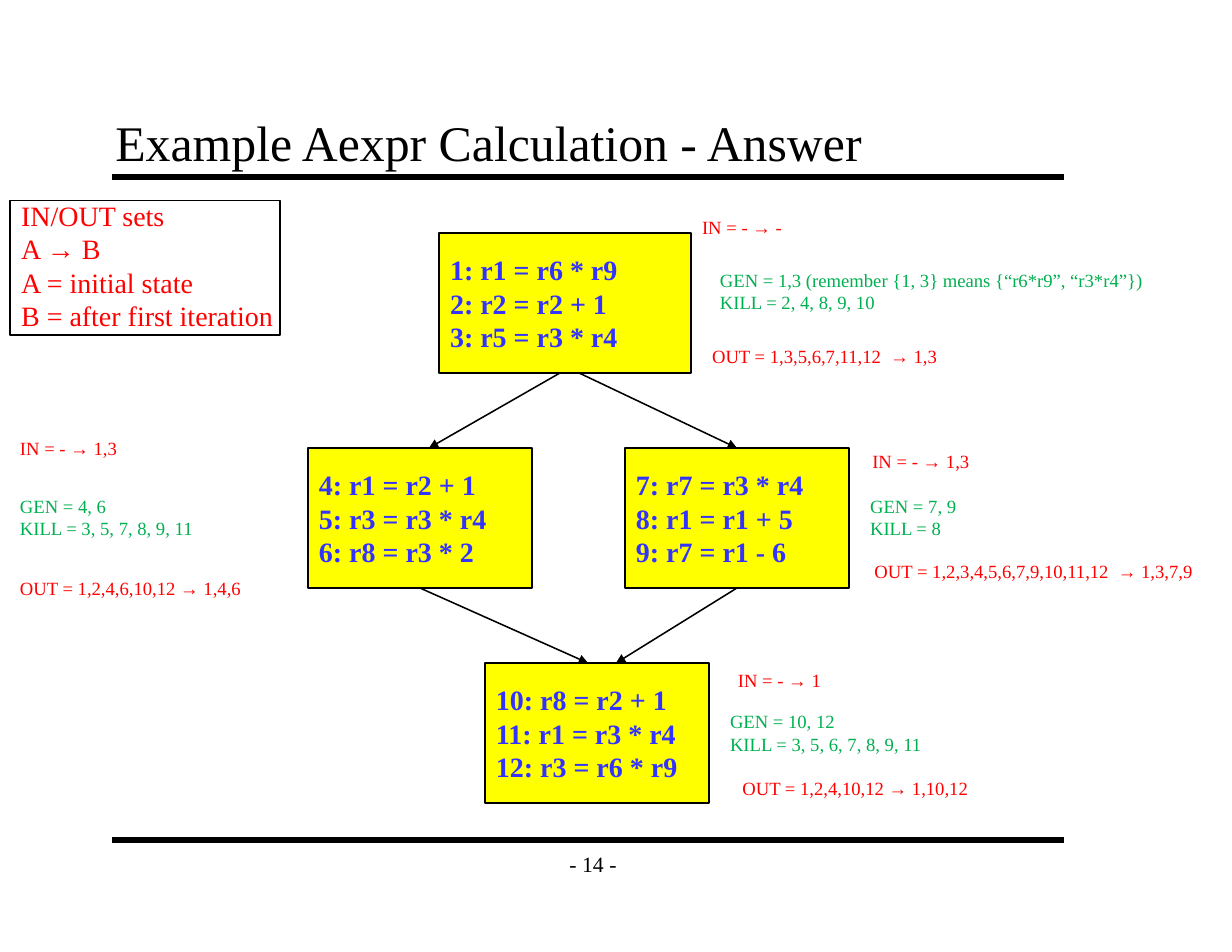
from dataclasses import dataclass

from lxml import etree
from pptx import Presentation
from pptx.dml.color import RGBColor
from pptx.enum.shapes import MSO_CONNECTOR, MSO_SHAPE
from pptx.enum.text import MSO_ANCHOR, MSO_AUTO_SIZE, PP_ALIGN
from pptx.oxml.ns import qn
from pptx.shapes.autoshape import Shape
from pptx.shapes.connector import Connector
from pptx.slide import Slide
from pptx.text.text import TextFrame
from pptx.util import Inches, Pt

STRAIGHT = MSO_CONNECTOR.STRAIGHT
RECTANGLE = MSO_SHAPE.RECTANGLE
TOP, MIDDLE, BOTTOM = MSO_ANCHOR.TOP, MSO_ANCHOR.MIDDLE, MSO_ANCHOR.BOTTOM
LEFT, CENTER = PP_ALIGN.LEFT, PP_ALIGN.CENTER
FIT_SHAPE, NO_FIT = MSO_AUTO_SIZE.SHAPE_TO_FIT_TEXT, MSO_AUTO_SIZE.NONE
TOP_SIDE, BOTTOM_SIDE = 0, 2


@dataclass(frozen=True)
class Theme:
    font: str = "Times New Roman"
    ink: RGBColor = RGBColor(0, 0, 0)
    code: RGBColor = RGBColor(0x33, 0x33, 0xFF)
    block: RGBColor = RGBColor(0xFF, 0xFF, 0)
    flow: RGBColor = RGBColor(0xFF, 0, 0)
    local: RGBColor = RGBColor(0, 0xB0, 0x50)
    title_size: int = 32
    body_size: int = 18
    page_size: int = 14
    note_size: int = 12
    rule_width: int = 4
    line_width: int = 1


@dataclass(frozen=True)
class Block:
    left: float
    top: float
    width: float
    code: str


@dataclass(frozen=True)
class Edge:
    source: int
    target: int
    start_x: float
    end_x: float
    from_middle: bool = False
    to_middle: bool = False


@dataclass(frozen=True)
class Note:
    left: float
    top: float
    width: float
    text: str


THEME = Theme()
BLOCK_HEIGHT = 1.25

BLOCKS = [
    Block(3.92, 2.08, 2.25, "1: r1 = r6 * r9\n2: r2 = r2 + 1\n3: r5 = r3 * r4"),
    Block(2.75, 4, 2, "4: r1 = r2 + 1\n5: r3 = r3 * r4\n6: r8 = r3 * 2"),
    Block(5.58, 4, 2, "7: r7 = r3 * r4\n8: r1 = r1 + 5\n9: r7 = r1 - 6"),
    Block(4.33, 5.92, 2, "10: r8 = r2 + 1\n11: r1 = r3 * r4\n12: r3 = r6 * r9"),
]

EDGES = [
    Edge(0, 1, 5, 3.83),
    Edge(0, 2, 5.17, 6.58, to_middle=True),
    Edge(2, 3, 6.58, 5.5, from_middle=True),
    Edge(1, 3, 3.75, 5.25, from_middle=True),
]

LOCAL_SETS = [
    Note(6.33, 2.35, 4.06,
         "GEN = 1,3 (remember {1, 3} means {“r6*r9”, “r3*r4”})\nKILL = 2, 4, 8, 9, 10"),
    Note(7.67, 4.37, 1.01, "GEN = 7, 9\nKILL = 8"),
    Note(6.42, 6.29, 1.93, "GEN = 10, 12\nKILL = 3, 5, 6, 7, 8, 9, 11"),
    Note(0.08, 4.37, 1.76, "GEN = 4, 6\nKILL = 3, 5, 7, 8, 9, 11"),
]

FLOW_SETS = [
    Note(6.17, 1.88, 0.92, "IN = - → -"),
    Note(6.26, 3.03, 2.23, "OUT = 1,3,5,6,7,11,12  → 1,3"),
    Note(7.69, 3.97, 1.11, "IN = - → 1,3"),
    Note(7.71, 4.95, 3.07, "OUT = 1,2,3,4,5,6,7,9,10,11,12  → 1,3,7,9"),
    Note(6.49, 5.92, 0.99, "IN = - → 1"),
    Note(6.53, 6.89, 2.28, "OUT = 1,2,4,10,12 → 1,10,12"),
    Note(0.08, 3.85, 1.11, "IN = - → 1,3"),
    Note(0.08, 5.1, 2.23, "OUT = 1,2,4,6,10,12 → 1,4,6"),
]


def write(frame: TextFrame, text: str, *, size: int, color: RGBColor,
          bold: bool = False, align: PP_ALIGN = LEFT, anchor: MSO_ANCHOR = TOP,
          wrap: bool = False, fit: MSO_AUTO_SIZE = NO_FIT,
          inset_x: float = 0.1, inset_y: float = 0.05) -> None:
    frame.word_wrap = wrap
    frame.auto_size = fit
    frame.vertical_anchor = anchor
    frame.margin_left = frame.margin_right = Inches(inset_x)
    frame.margin_top = frame.margin_bottom = Inches(inset_y)
    frame.text = text
    for paragraph in frame.paragraphs:
        paragraph.alignment = align
        for run in paragraph.runs:
            run.font.name = THEME.font
            run.font.size = Pt(size)
            run.font.bold = bold
            run.font.color.rgb = color


def add_text(slide: Slide, left: float, top: float, width: float, height: float,
             text: str, **text_format) -> None:
    box = slide.shapes.add_textbox(Inches(left), Inches(top), Inches(width), Inches(height))
    write(box.text_frame, text, **text_format)


def add_frame(slide: Slide, left: float, top: float, width: float, height: float) -> Shape:
    outline = slide.shapes.add_shape(
        RECTANGLE, Inches(left), Inches(top), Inches(width), Inches(height))
    outline.shadow.inherit = False
    outline.fill.background()
    outline.line.color.rgb = THEME.ink
    outline.line.width = Pt(THEME.line_width)
    return outline


def add_block(slide: Slide, block: Block) -> Shape:
    body = add_frame(slide, block.left, block.top, block.width, BLOCK_HEIGHT)
    body.fill.solid()
    body.fill.fore_color.rgb = THEME.block
    write(body.text_frame, block.code, size=THEME.body_size, color=THEME.code,
          bold=True, anchor=MIDDLE)
    return body


def add_line(slide: Slide, x1: float, y1: float, x2: float, y2: float,
             width: int) -> Connector:
    line = slide.shapes.add_connector(STRAIGHT, Inches(x1), Inches(y1), Inches(x2), Inches(y2))
    line.line.color.rgb = THEME.ink
    line.line.width = Pt(width)
    etree.SubElement(line._element.spPr, qn("a:effectLst"))
    return line


def add_edge(slide: Slide, edge: Edge, bodies: list[Shape]) -> None:
    arrow = add_line(slide, edge.start_x, BLOCKS[edge.source].top + BLOCK_HEIGHT,
                     edge.end_x, BLOCKS[edge.target].top, THEME.line_width)
    etree.SubElement(arrow.line._get_or_add_ln(), qn("a:tailEnd"), type="triangle")
    if edge.from_middle:
        arrow.begin_connect(bodies[edge.source], BOTTOM_SIDE)
    if edge.to_middle:
        arrow.end_connect(bodies[edge.target], TOP_SIDE)


def add_notes(slide: Slide, notes: list[Note], height: float, color: RGBColor) -> None:
    for note in notes:
        add_text(slide, note.left, note.top, note.width, height, note.text,
                 size=THEME.note_size, color=color, fit=FIT_SHAPE)


def main() -> None:
    deck = Presentation()
    deck.slide_width, deck.slide_height = Inches(11), Inches(8.5)
    slide = deck.slides.add_slide(deck.slide_layouts[6])

    for rule_y in (1.58, 7.5):
        add_line(slide, 1, rule_y, 9.5, rule_y, THEME.rule_width)
    add_text(slide, 4.92, 7.5, 0.75, 0.42, "- 14 -", size=THEME.page_size, color=THEME.ink,
             align=CENTER, anchor=MIDDLE, inset_x=0.11, inset_y=0.06)
    add_text(slide, 0.92, 0.92, 8.5, 0.67, "Example Aexpr Calculation - Answer",
             size=THEME.title_size, color=THEME.ink, anchor=BOTTOM, wrap=True,
             inset_x=0.11, inset_y=0.06)

    bodies = [add_block(slide, block) for block in BLOCKS]
    for edge in EDGES:
        add_edge(slide, edge, bodies)
    add_notes(slide, LOCAL_SETS, 0.5, THEME.local)
    add_notes(slide, FLOW_SETS, 0.3, THEME.flow)

    add_text(slide, 0.09, 1.72, 2.48, 1.31,
             "IN/OUT sets\nA → B\nA = initial state\nB = after first iteration",
             size=THEME.body_size, color=THEME.flow, fit=FIT_SHAPE)
    add_frame(slide, 0.09, 1.79, 2.41, 1.2)

    deck.save("out.pptx")


if __name__ == "__main__":
    main()
